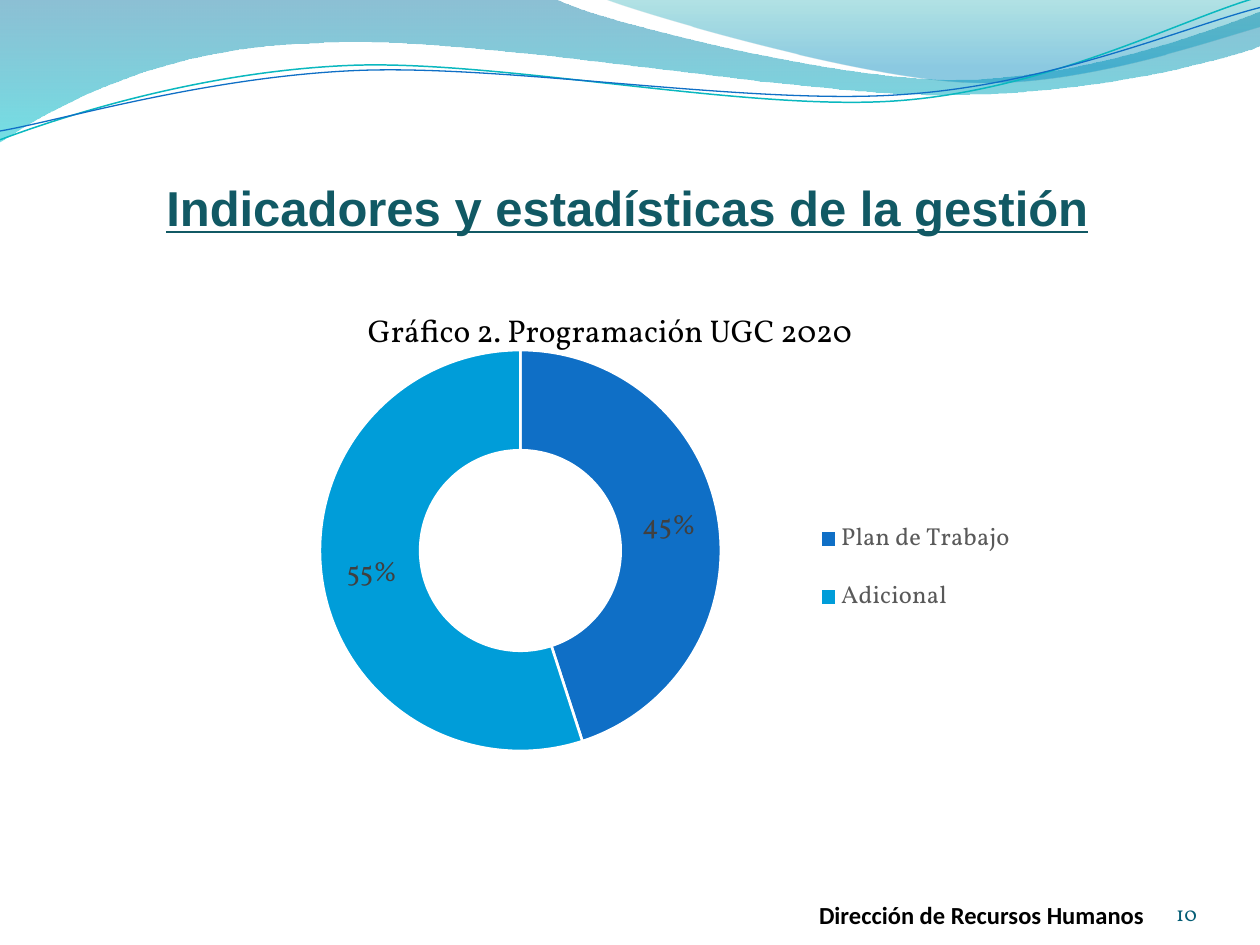
from lxml import etree
from pptx import Presentation, util as u
from pptx.chart.data import CategoryChartData
from pptx.dml.color import RGBColor
from pptx.enum import chart as ch, text
from pptx.oxml import parse_xml
from pptx.oxml.ns import nsdecls, qn

C = {"title": "115964", "number": "045D75", "black": "000000", "legend": "595959",
     "label": "404040", "white": "FFFFFF", "blue": "0F6FC6", "sky": "009DD9",
     "teal": "0AB8BF"}

# Lengths are in inches. A path is a start, then lines (2 numbers) and Bézier curves (6 numbers).
# Gradient stops run from top to bottom: position, colour, opacity in percent.
BANDS = [
    ([(0, 0), (4.4, -0.01), (4.76, 0.17, 6.64, 0.63, 7.58, 0.63),
      (8.53, 0.63, 9.58, 0.26, 10, 0.09), (10.01, 0.36),
      (9.83, 0.44, 8.7, 0.76, 7.46, 0.75), (6.22, 0.75, 3.82, 0.28, 2.57, 0.34),
      (1.29, 0.36, 0.46, 0.83, -0.01, 1.13)],
     [(0, "0074A1", 45), (1, "00C6CF", 55)]),
    ([(4.79, -0.01), (5.09, 0.11, 6.82, 0.62, 7.69, 0.65),
      (8.56, 0.69, 9.61, 0.32, 10, 0.21), (10, 0)],
     [(0, "00A1A9", 30), (0.8, "008BBF", 45)]),
]
WAVES = [
    ([(0, 1.11), (0.48, 0.93, 1.58, 0.57, 2.77, 0.52),
      (3.95, 0.47, 5.93, 0.89, 7.13, 0.8), (8.33, 0.71, 9.38, 0.15, 9.98, -0.02)],
     "teal", 0.85),
    ([(0, 1.04), (0.47, 0.96, 1.64, 0.61, 2.83, 0.56),
      (4.03, 0.51, 5.97, 0.84, 7.17, 0.75), (8.36, 0.67, 9.41, 0.21, 10, 0.06)],
     "blue", 0.75),
]
TITLE = "Indicadores y estadísticas de la gestión"
CAPTION = "Gráfico 2. Programación UGC 2020"
FOOTER, NUMBER = "Dirección de Recursos Humanos", "10"
SHARES = [("Plan de Trabajo", 45, "blue"), ("Adicional", 55, "sky")]
CHART_BOX = (1.22, 2.64, 7.56, 3.46)
PLOT_LAYOUT = (0.17, 0.04, 0.43, 0.92)     # fractions of the chart box
LEGEND_LAYOUT = (0.7, 0.38, 0.2, 0.32)


def inch(value):
    return u.Cm(value * 2.54)


def rgb(name):
    return RGBColor.from_string(C.get(name, name))


def set_font(font, name, size, color, bold=False):
    font.name, font.size, font.bold = name, u.Pt(size), bold
    font.color.rgb = rgb(color)


def add_path(s, path, close):
    """Build a freeform through the end points, then bend its curved segments."""
    ends = [tuple(map(inch, seg[-2:])) for seg in path]
    builder = s.shapes.build_freeform(*ends[0])
    builder.add_line_segments(ends[1:], close=close)
    sp = builder.convert_to_shape()
    sp.shadow.inherit = False
    lines = list(sp._element.iter(qn("a:lnTo")))
    for line, seg in zip(lines, path[1:]):
        if len(seg) == 6:
            curve = etree.Element(qn("a:cubicBezTo"))
            for x, y in zip(seg[::2], seg[1::2]):
                pt = etree.SubElement(curve, qn("a:pt"))
                pt.set("x", str(inch(x) - sp.left))
                pt.set("y", str(inch(y) - sp.top))
            line.getparent().replace(line, curve)
    return sp


def add_band(s, path, stops):
    sp = add_path(s, path, True)
    sp.line.fill.background()
    sp.fill.gradient()
    sp.fill.gradient_angle = 270
    for stop, (pos, color, _) in zip(sp.fill.gradient_stops, stops):
        stop.position = pos
        stop.color.rgb = rgb(color)
    colors = sp._element.spPr.iter(qn("a:srgbClr"))
    for el, (_, _, opacity) in zip(colors, stops):
        etree.SubElement(el, qn("a:alpha")).set("val", str(opacity * 1000))


def add_wave(s, path, color, width):
    sp = add_path(s, path, False)
    sp.fill.background()
    sp.line.color.rgb = rgb(color)
    sp.line.width = u.Pt(width)


def write(sp, box, content, font, align, anchor, insets=(0.1, 0.05, 0.1, 0.05)):
    sp.left, sp.top, sp.width, sp.height = map(inch, box)
    tf = sp.text_frame
    tf.text, tf.word_wrap, tf.vertical_anchor = content, True, anchor
    tf.auto_size = text.MSO_AUTO_SIZE.NONE
    tf.margin_left, tf.margin_top, tf.margin_right, tf.margin_bottom = map(inch, insets)
    p = tf.paragraphs[0]
    p.alignment = align
    set_font(p.runs[0].font, *font)
    return p.runs[0]


def place(element, fractions, inner=False):
    """Give a plot area or legend a fixed place in its chart."""
    for old in element.findall(qn("c:layout")):
        element.remove(old)
    parts = '<c:layoutTarget val="inner"/>' if inner else ""
    parts += '<c:xMode val="edge"/><c:yMode val="edge"/>'
    parts += "".join(f'<c:{k} val="{v}"/>' for k, v in zip("xywh", fractions))
    layout = parse_xml(f'<c:layout {nsdecls("c")}><c:manualLayout>{parts}'
                       '</c:manualLayout></c:layout>')
    position = element.find(qn("c:legendPos"))
    element.insert(0 if position is None else 1, layout)


def add_doughnut(s):
    data = CategoryChartData()
    data.categories = [name for name, _, _ in SHARES]
    data.add_series("Series 1", [value for _, value, _ in SHARES])
    chart = s.shapes.add_chart(ch.XL_CHART_TYPE.DOUGHNUT, *map(inch, CHART_BOX), data).chart
    chart.has_title = False
    set_font(chart.font, "Vollkorn", 10, "black")
    chart.has_legend = True
    chart.legend.position = ch.XL_LEGEND_POSITION.RIGHT
    chart.legend.include_in_layout = False
    set_font(chart.legend.font, "Vollkorn", 14, "legend")
    plot = chart.plots[0]
    plot.vary_by_categories = True
    plot._element.find(qn("c:holeSize")).set("val", "50")
    for i, (_, _, color) in enumerate(SHARES):
        fmt = plot.series[0].points[i].format
        fmt.fill.solid()
        fmt.fill.fore_color.rgb = rgb(color)
        fmt.line.color.rgb = rgb("white")
        fmt.line.width = u.Pt(1.5)
    labels = plot.series[0].data_labels
    labels.show_percentage, labels.show_value = True, False
    labels.number_format, labels.number_format_is_linked = "0%", False
    set_font(labels.font, "Vollkorn", 16, "label")
    place(plot._element.getparent(), PLOT_LAYOUT, inner=True)
    place(chart.legend._element, LEGEND_LAYOUT)


def main():
    prs = Presentation()
    prs.slide_width, prs.slide_height = inch(10), inch(7.5)
    s = prs.slides.add_slide(prs.slide_layouts[5])
    for path, stops in BANDS:
        add_band(s, path, stops)
    for path, color, width in WAVES:
        add_wave(s, path, color, width)

    left, center, right = text.PP_ALIGN.LEFT, text.PP_ALIGN.CENTER, text.PP_ALIGN.RIGHT
    top, bottom = text.MSO_ANCHOR.TOP, text.MSO_ANCHOR.BOTTOM
    r = write(s.shapes.title, (1.22, 1.36, 7.56, 0.57), TITLE,
              ("Arial", 28, "title", True), left, top)
    r.font.underline = True
    for box, content, font, align, anchor, insets in [
        ((6.5, 6.98, 2.99, 0.4), FOOTER, ("Calibri", 14, "black", True),
         left, bottom, (0, 0.05, 0, 0)),
        ((8.67, 6.95, 0.83, 0.4), NUMBER, ("Vollkorn", 12, "number"),
         right, bottom, (0, 0, 0, 0)),
        ((1.77, 2.42, 6.14, 0.4), CAPTION, ("Vollkorn", 18, "black"),
         center, top, (0.1, 0.05, 0.1, 0.05)),
    ]:
        write(s.shapes.add_textbox(0, 0, 0, 0), box, content, font, align, anchor, insets)
    add_doughnut(s)
    prs.save("out.pptx")


if __name__ == "__main__":
    main()
